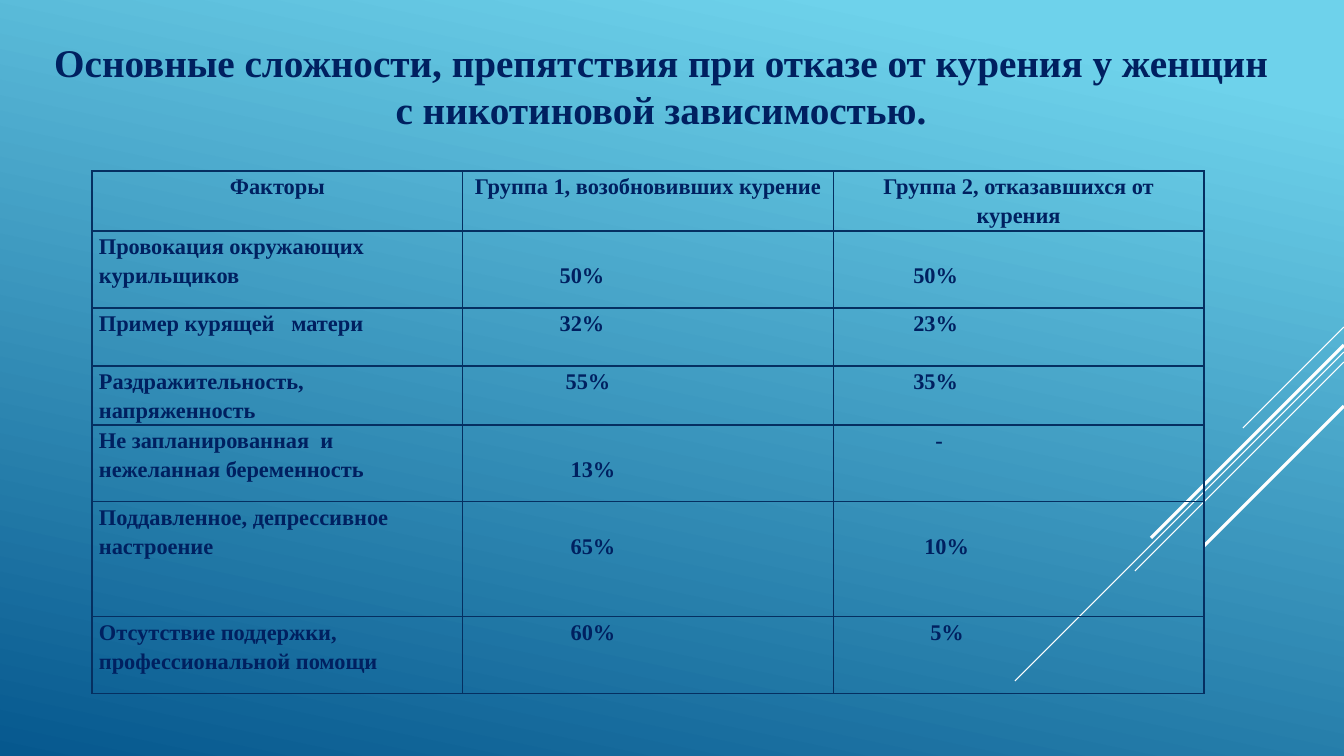
from lxml.etree import SubElement
from pptx import Presentation
from pptx.dml.color import RGBColor
from pptx.enum.shapes import MSO_CONNECTOR as CONN
from pptx.enum.text import PP_ALIGN as ALIGN
from pptx.oxml.ns import qn
from pptx.util import Pt

PX = 12192000 / 1344
FONT = "Times New Roman"
COLORS = {"text": "002060", "border": "052F61", "ray": "FFFFFF",
          "sky": "6ED2EB", "deep": "06588E"}
TITLE = ("Основные сложности, препятствия при отказе от курения у женщин "
         "с никотиновой зависимостью.")
HEADERS = ["Факторы", "Группа 1, возобновивших курение",
           "Группа 2, отказавшихся от курения"]
FACTORS = [
    (77, "Провокация окружающих курильщиков", ("50%", 90, 1), ("50%", 73, 1)),
    (58, "Пример курящей   матери", ("32%", 90, 0), ("23%", 73, 0)),
    (59, "Раздражительность, напряженность", ("55%", 96, 0), ("35%", 73, 0)),
    (77, "Не запланированная  и нежеланная беременность",
     ("13%", 101, 1), ("-", 95, 0)),
    (115, "Поддавленное, депрессивное настроение",
     ("65%", 101, 1), ("10%", 84, 1)),
    (77, "Отсутствие поддержки, профессиональной помощи",
     ("60%", 101, 0), ("5%", 90, 0)),
]
HEADER_HEIGHT, LINE_HEIGHT, INSET = 60, 29, 7
RAYS = [(327, 101, 0.75), (352, 329, 0.75), (362, 209, 0.75),
        (345, 193, 2.25), (406, 140, 2.25)]


def px(n):
    """Turn px into EMU."""
    return round(n * PX)


def rgb(name):
    """Look up a named colour."""
    return RGBColor.from_string(COLORS[name])


def write(tf, text, size, align):
    """Put one bold paragraph into a text frame."""
    tf.word_wrap = True
    tf.text = text
    p = tf.paragraphs[0]
    p.alignment = align
    font = p.runs[0].font
    font.name, font.size, font.bold = FONT, Pt(size), True
    font.color.rgb = rgb("text")
    return p


def add_background(s):
    """Fill the slide with the sky gradient."""
    fill = s.background.fill
    fill.gradient()
    fill.gradient_angle = 258
    for stop, position, name in zip(fill.gradient_stops, (0.1, 1), ("sky", "deep")):
        stop.position = position
        stop.color.rgb = rgb(name)


def add_rays(s, right):
    """Draw the diagonal rays falling from the right edge."""
    for y, reach, weight in RAYS:
        ray = s.shapes.add_connector(CONN.STRAIGHT, px(right), px(y),
                                     px(right - reach), px(y + reach))
        ray.line.color.rgb = rgb("ray")
        ray.line.width = Pt(weight)
        SubElement(ray._element.spPr, qn("a:effectLst"))


def add_borders(cell):
    """Outline all four sides of a cell."""
    tcPr = cell._tc.get_or_add_tcPr()
    for side in "LRTB":
        ln = SubElement(tcPr, qn(f"a:ln{side}"), w=str(Pt(1)))
        fill = SubElement(ln, qn("a:solidFill"))
        SubElement(fill, qn("a:srgbClr"), val=COLORS["border"])


def fill_cell(cell, text, align=ALIGN.LEFT, indent=0, lines_down=0):
    """Write and style one table cell."""
    cell.margin_left, cell.margin_right = px(INSET + indent), px(INSET)
    cell.margin_top, cell.margin_bottom = px(lines_down * LINE_HEIGHT), 0
    write(cell.text_frame, text, 16, align).line_spacing = 1.15
    add_borders(cell)
    cell.fill.background()


def add_factors(s, x, y, w):
    """Build the table of factors."""
    heights = [HEADER_HEIGHT] + [row[0] for row in FACTORS]
    table = s.shapes.add_table(len(heights), len(HEADERS), px(x), px(y),
                               px(w), px(sum(heights))).table
    table.first_row = table.horz_banding = False
    for row, height in zip(table.rows, heights):
        row.height = px(height)
    for c, header in enumerate(HEADERS):
        fill_cell(table.cell(0, c), header, ALIGN.CENTER)
    for r, (_, factor, *values) in enumerate(FACTORS, 1):
        fill_cell(table.cell(r, 0), factor)
        for c, (value, indent, lines_down) in enumerate(values, 1):
            fill_cell(table.cell(r, c), value, ALIGN.LEFT, indent, lines_down)


def add_title(s, x, y, w, h):
    """Place the centred slide title."""
    sp = s.shapes.add_textbox(px(x), px(y), px(w), px(h))
    write(sp.text_frame, TITLE, 28, ALIGN.CENTER)


def main():
    """Build and save the slide."""
    prs = Presentation()
    prs.slide_width, prs.slide_height = px(1344), px(756)
    s = prs.slides.add_slide(prs.slide_layouts[6])
    add_background(s)
    add_rays(s, 1344)
    add_factors(s, 92, 171, 1112)
    add_title(s, 42, 33, 1238, 105)
    prs.save("out.pptx")


if __name__ == "__main__":
    main()
